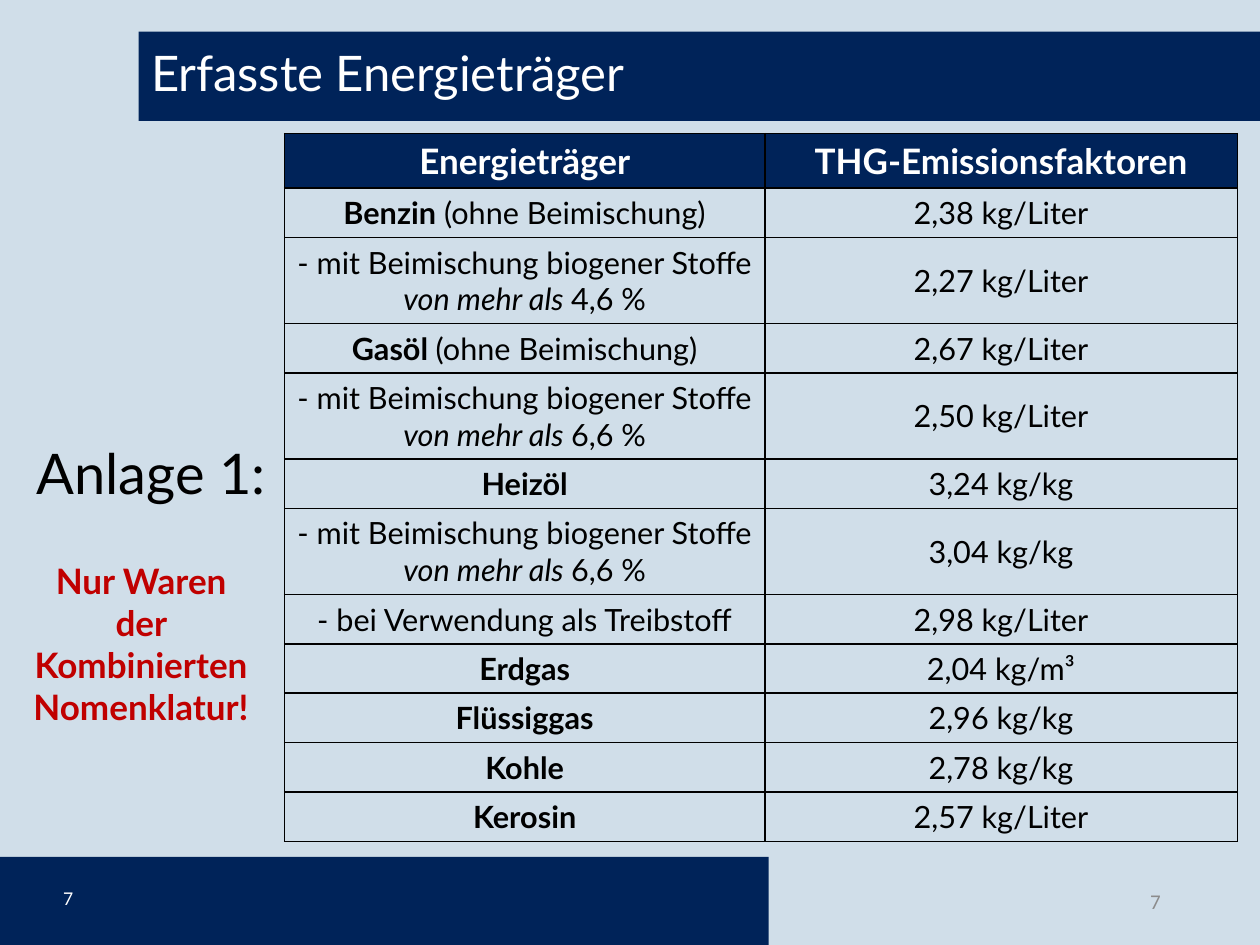
from dataclasses import dataclass

from lxml import etree
from pptx import Presentation
from pptx import util as u
from pptx.dml.color import RGBColor
from pptx.enum import shapes, text
from pptx.oxml import ns


@dataclass(frozen=True)
class Theme:
    background: str = "D0DEE9"
    navy: str = "002359"
    white: str = "FFFFFF"
    black: str = "000000"
    red: str = "C00000"
    grey: str = "8C8C8C"
    font: str = "Lato"
    number_font: str = "Calibri"
    title: float = 28
    annex: float = 32
    strong: float = 20
    body: float = 17.5
    number: float = 12
    small_number: float = 10
    border: float = 1


THEME = Theme()
WIDTH, HEIGHT = 10, 7.5
PAGE = "7"
BOLD, ITALIC, PLAIN = "bold", "italic", "plain"


def blend(share):
    return [("- mit Beimischung biogener Stoffe ", PLAIN),
            ("von mehr als ", ITALIC), (share, PLAIN)]


HEADER = ["Energieträger", "THG-Emissionsfaktoren"]
FACTORS = [
    ([("Benzin", BOLD), (" (ohne Beimischung)", PLAIN)], "2,38 kg/Liter"),
    (blend("4,6 %"), "2,27 kg/Liter"),
    ([("Gasöl ", BOLD), ("(ohne Beimischung)", PLAIN)], "2,67 kg/Liter"),
    (blend("6,6 %"), "2,50 kg/Liter"),
    ([("Heizöl", BOLD)], "3,24 kg/kg"),
    (blend("6,6 %"), "3,04 kg/kg"),
    ([("- bei Verwendung als Treibstoff", PLAIN)], "2,98 kg/Liter"),
    ([("Erdgas", BOLD)], "2,04 kg/m³"),
    ([("Flüssiggas", BOLD)], "2,96 kg/kg"),
    ([("Kohle", BOLD)], "2,78 kg/kg"),
    ([("Kerosin", BOLD)], "2,57 kg/Liter"),
]
TABLE_LEFT, TABLE_TOP = 2.26, 1.06
COLUMN_WIDTHS = [3.81, 3.75]
HEADER_ROW, SINGLE_ROW, DOUBLE_ROW = 0.43, 0.39, 0.68

LEFT, CENTER, RIGHT = text.PP_ALIGN.LEFT, text.PP_ALIGN.CENTER, text.PP_ALIGN.RIGHT
TOP, MIDDLE = text.MSO_ANCHOR.TOP, text.MSO_ANCHOR.MIDDLE


def style_font(font, size, color, bold=False, italic=False, name=THEME.font):
    font.name = name
    font.size = u.Pt(size)
    font.bold = bold
    font.italic = italic
    font.color.rgb = RGBColor.from_string(color)


def add_bar(slide, left, top, width, height):
    bar = slide.shapes.add_shape(
        shapes.MSO_SHAPE.RECTANGLE, *map(u.Inches, (left, top, width, height)))
    bar.shadow.inherit = False
    bar.fill.solid()
    bar.fill.fore_color.rgb = RGBColor.from_string(THEME.navy)
    bar.line.fill.background()


def add_label(slide, box, content, size, color, align=LEFT, anchor=TOP,
              spacing=None, margin=0.1, **style):
    frame = slide.shapes.add_textbox(*map(u.Inches, box)).text_frame
    frame.word_wrap = True
    frame.vertical_anchor = anchor
    frame.margin_left = frame.margin_right = u.Inches(margin)
    frame.text = content
    paragraph = frame.paragraphs[0]
    paragraph.alignment = align
    paragraph.line_spacing = spacing
    style_font(paragraph.runs[0].font, size, color, **style)


def fill_cell(cell, runs, size, color, anchor, fill=None):
    properties = cell._tc.get_or_add_tcPr()
    for side in ("lnL", "lnR", "lnT", "lnB"):
        line = etree.SubElement(properties, ns.qn(f"a:{side}"), w=str(u.Pt(THEME.border)))
        solid = etree.SubElement(line, ns.qn("a:solidFill"))
        etree.SubElement(solid, ns.qn("a:srgbClr"), val=THEME.black)
    if fill:
        cell.fill.solid()
        cell.fill.fore_color.rgb = RGBColor.from_string(fill)
    else:
        cell.fill.background()
    cell.vertical_anchor = anchor
    paragraph = cell.text_frame.paragraphs[0]
    paragraph.alignment = CENTER
    for content, style in runs:
        run = paragraph.add_run()
        run.text = content
        style_font(run.font, size, color, style == BOLD, style == ITALIC)


def add_factor_table(slide):
    heights = [HEADER_ROW] + [
        DOUBLE_ROW if len(carrier) == 3 else SINGLE_ROW for carrier, _ in FACTORS]
    table = slide.shapes.add_table(
        len(heights), len(COLUMN_WIDTHS),
        *map(u.Inches, (TABLE_LEFT, TABLE_TOP, sum(COLUMN_WIDTHS), sum(heights)))).table
    table.first_row = table.horz_banding = False
    for column, width in zip(table.columns, COLUMN_WIDTHS):
        column.width = u.Inches(width)
    for row, height in zip(table.rows, heights):
        row.height = u.Inches(height)
    for column, heading in enumerate(HEADER):
        fill_cell(table.cell(0, column), [(heading, BOLD)],
                  THEME.strong, THEME.white, TOP, THEME.navy)
    for row, (carrier, factor) in enumerate(FACTORS, 1):
        for column, runs in enumerate((carrier, [(factor, PLAIN)])):
            fill_cell(table.cell(row, column), runs, THEME.body, THEME.black, MIDDLE)


def main():
    presentation = Presentation()
    presentation.slide_width = u.Inches(WIDTH)
    presentation.slide_height = u.Inches(HEIGHT)
    slide = presentation.slides.add_slide(presentation.slide_layouts[6])
    slide.background.fill.solid()
    slide.background.fill.fore_color.rgb = RGBColor.from_string(THEME.background)

    add_bar(slide, 0.11 * WIDTH, 0.25, 0.89 * WIDTH, 0.71)
    add_label(slide, (7.06, 6.95, 2.25, 0.4), PAGE, THEME.number, THEME.grey,
              RIGHT, MIDDLE, name=THEME.number_font)
    add_bar(slide, 0, HEIGHT - 0.7, 0.61 * WIDTH, 0.7)
    add_label(slide, (0.2, 6.93, 0.45, 0.4), PAGE, THEME.small_number, THEME.white,
              RIGHT, MIDDLE, margin=0.07)
    add_label(slide, (0.11 * WIDTH, 0.24, 8.62, 0.72), "Erfasste Energieträger",
              THEME.title, THEME.white, anchor=MIDDLE, spacing=0.9)
    add_factor_table(slide)
    add_label(slide, (0.19, 3.49, 2.07, 0.6), "Anlage 1:", THEME.annex,
              THEME.black, spacing=0.9)
    add_label(slide, (0.12, 4.39, 2, 1.43), "Nur Waren der Kombinierten Nomenklatur!",
              THEME.strong, THEME.red, CENTER, bold=True)
    presentation.save("out.pptx")


if __name__ == "__main__":
    main()
